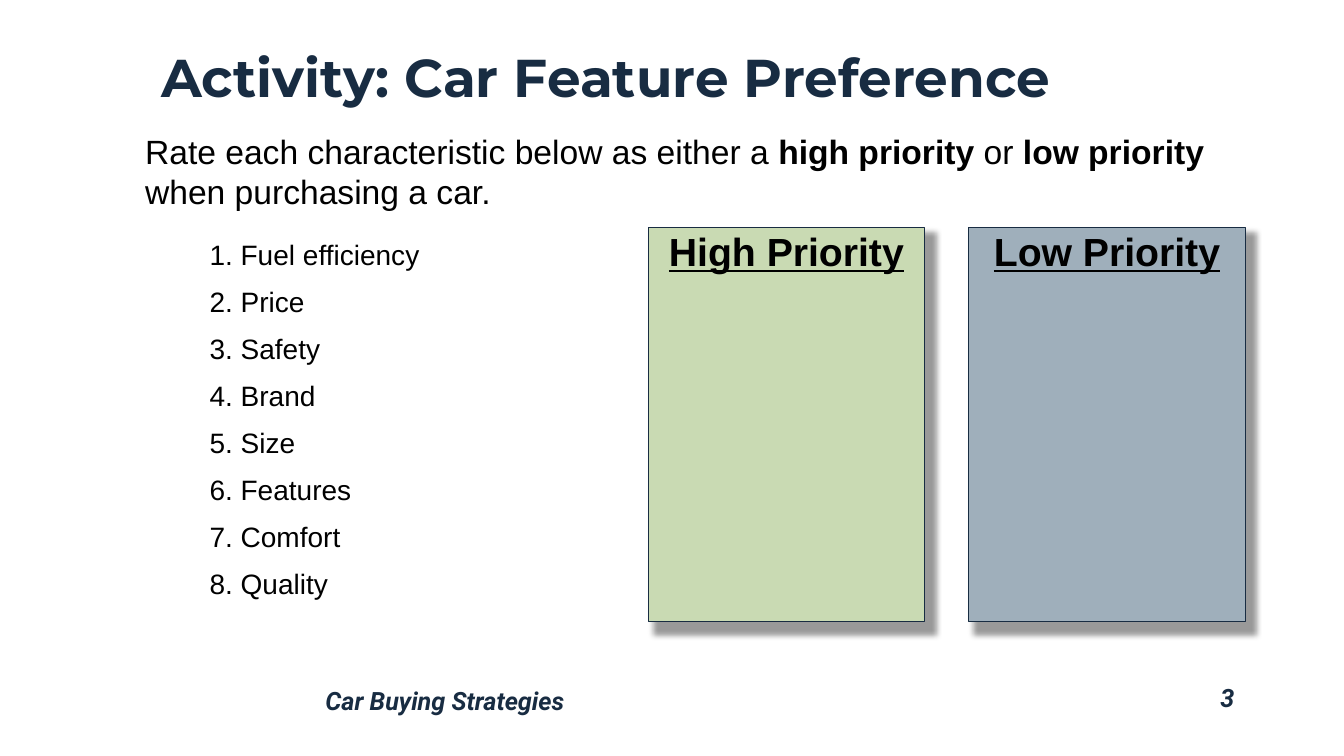
"""Build the car feature preference activity slide."""
from lxml.etree import SubElement
from pptx import Presentation
from pptx.dml.color import RGBColor
from pptx.enum.shapes import MSO_SHAPE as Shape
from pptx.enum.text import MSO_ANCHOR as Anchor, PP_ALIGN as Align
from pptx.oxml.ns import qn
from pptx.util import Inches, Pt

NAVY = RGBColor(0x18, 0x2C, 0x42)
BLACK = RGBColor(0x00, 0x00, 0x00)
GREEN = RGBColor(0xC9, 0xDA, 0xB3)
SLATE = RGBColor(0x9F, 0xAF, 0xBB)

deck = Presentation()
deck.slide_width, deck.slide_height = Inches(13.33), Inches(7.5)
page = deck.slides.add_slide(deck.slide_layouts[6])


def add_span(para, text, font, size, color, bold=False, italic=False):
    """Add one styled run to a paragraph."""
    span = para.add_run()
    span.text = text
    span.font.name, span.font.size = font, Pt(size)
    span.font.bold, span.font.italic = bold, italic
    span.font.color.rgb = color
    return span


def add_box(left, top, width, height, anchor=Anchor.TOP):
    """Add a wrapping text box and return its text frame."""
    box = page.shapes.add_textbox(*map(Inches, (left, top, width, height)))
    box.text_frame.word_wrap = True
    box.text_frame.vertical_anchor = anchor
    return box.text_frame


title = add_box(1.5, 0.11, 10.84, 1.02, Anchor.BOTTOM).paragraphs[0]
title.line_spacing = 0.9
add_span(title, "Activity: Car Feature Preference", "Montserrat", 38, NAVY, bold=True)

for text, left, top, width, align in (
    ("Car Buying Strategies", 3.13, 6.78, 7.63, Align.LEFT),
    ("3", 10.76, 6.75, 1.58, Align.RIGHT),
):
    footer = add_box(left, top, width, 0.38).paragraphs[0]
    footer.alignment, footer.line_spacing = align, 0.9
    add_span(footer, text, "Roboto", 18, NAVY, bold=True, italic=True)

prompt = add_box(1.34, 1.25, 10.72, 0.51).paragraphs[0]
prompt.space_after = Pt(2)
for text, bold in (
    ("Rate each characteristic below as either a ", False),
    ("high priority", True),
    (" or ", False),
    ("low priority ", True),
    ("when purchasing a car.", False),
):
    add_span(prompt, text, "Arial", 24, BLACK, bold)

features = ("Fuel efficiency", "Price", "Safety", "Brand",
            "Size", "Features", "Comfort", "Quality")
feature_list = add_box(1.98, 2.34, 2.63, 3.77)
for number, feature in enumerate(features, 1):
    para = feature_list.paragraphs[0] if number == 1 else feature_list.add_paragraph()
    para.line_spacing = 0.9
    para.space_before = Pt(0 if number == 1 else 12)
    add_span(para, f"{number}. {feature}", "Arial", 20, BLACK)

for column, (heading, color) in enumerate((("High Priority", GREEN), ("Low Priority", SLATE))):
    card = page.shapes.add_shape(
        Shape.RECTANGLE, Inches(6.43 + 3.18 * column), Inches(2.26), Inches(2.74), Inches(3.91))
    card.fill.solid()
    card.fill.fore_color.rgb = color
    card.line.color.rgb, card.line.width = NAVY, Pt(0.75)
    card.shadow.inherit = False
    effects = card.element.spPr.find(qn("a:effectLst"))
    shadow = SubElement(effects, qn("a:outerShdw"), blurRad=str(Pt(4)), dist=str(Pt(5)),
                        dir="2700000", sx="102000", sy="102000", algn="tl", rotWithShape="0")
    tint = SubElement(shadow, qn("a:srgbClr"), val=str(BLACK))
    SubElement(tint, qn("a:alpha"), val="40000")
    card.text_frame.word_wrap = True
    card.text_frame.vertical_anchor = Anchor.TOP
    para = card.text_frame.paragraphs[0]
    para.alignment, para.line_spacing = Align.CENTER, 0.9
    add_span(para, heading, "Arial", 28, BLACK, bold=True).font.underline = True

deck.save("out.pptx")
